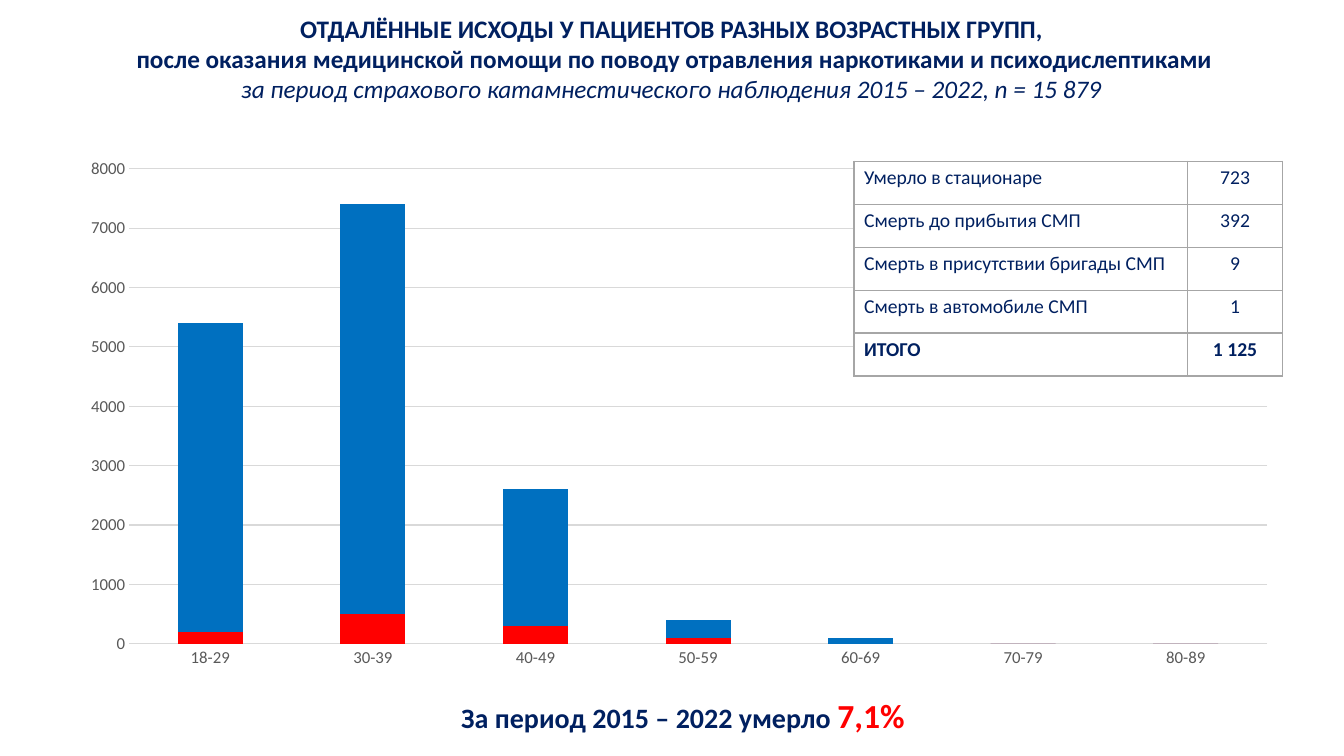
import lxml.etree
import pptx
import pptx.chart.data
import pptx.dml.color
import pptx.enum.chart
import pptx.enum.text
import pptx.oxml.ns
import pptx.util

Inches = pptx.util.Inches
Pt = pptx.util.Pt
CENTER = pptx.enum.text.PP_ALIGN.CENTER
LEFT = pptx.enum.text.PP_ALIGN.LEFT

COLORS = {
    "navy": "002060",
    "blue": "0070C0",
    "red": "FF0000",
    "label": "595959",
    "grid": "D9D9D9",
    "border": "A6A6A6",
    "paper": "FFFFFF",
}

TITLE_LINES = [
    ("ОТДАЛЁННЫЕ ИСХОДЫ У ПАЦИЕНТОВ РАЗНЫХ ВОЗРАСТНЫХ ГРУПП, ", {"bold": True}),
    ("после оказания медицинской помощи по поводу отравления наркотиками "
     "и психодислептиками", {"bold": True}),
    ("за период страхового катамнестического наблюдения 2015 – 2022, n = 15 879 ",
     {"bold": False, "italic": True}),
]
AGE_GROUPS = ["18-29", "30-39", "40-49", "50-59", "60-69", "70-79", "80-89"]
OUTCOMES = [
    ("Series 1", [200, 500, 300, 100, 0, 0, 0], "red"),
    ("Series 2", [5200, 6900, 2300, 300, 100, 0, 0], "blue"),
]
DEATHS = [
    ("Умерло в стационаре", "723"),
    ("Смерть до прибытия СМП", "392"),
    ("Смерть в присутствии бригады СМП", "9"),
    ("Смерть в автомобиле СМП", "1"),
    ("ИТОГО", "1 125"),
]


def rgb(name):
    return pptx.dml.color.RGBColor.from_string(COLORS[name])


def apply_values(target, values):
    for name, value in values.items():
        setattr(target, name, value)


def style_font(font, size, color, **values):
    apply_values(font, {"name": "Calibri", "size": Pt(size), **values})
    font.color.rgb = rgb(color)


def add_span(para, text, size, color, **values):
    span = para.add_run()
    span.text = text
    style_font(span.font, size, color, **values)


def place_title(slide, box):
    title = slide.shapes.title
    apply_values(title, dict(zip(("left", "top", "width", "height"), box)))
    frame = title.text_frame
    apply_values(frame, {
        "word_wrap": True,
        "auto_size": pptx.enum.text.MSO_AUTO_SIZE.NONE,
        "vertical_anchor": pptx.enum.text.MSO_ANCHOR.TOP,
    })
    for index, (text, values) in enumerate(TITLE_LINES):
        para = frame.add_paragraph() if index else frame.paragraphs[0]
        para.alignment = CENTER
        add_span(para, text, 18, "navy", **values)


def style_axis(axis):
    axis.major_tick_mark = pptx.enum.chart.XL_TICK_MARK.NONE
    axis.minor_tick_mark = pptx.enum.chart.XL_TICK_MARK.NONE
    style_font(axis.tick_labels.font, 12, "label")


def style_line(line):
    line.color.rgb = rgb("grid")
    line.width = Pt(0.75)


def add_age_chart(slide, box):
    data = pptx.chart.data.CategoryChartData()
    data.categories = AGE_GROUPS
    for name, counts, color in OUTCOMES:
        data.add_series(name, counts)
    chart = slide.shapes.add_chart(
        pptx.enum.chart.XL_CHART_TYPE.COLUMN_STACKED, *box, data).chart
    apply_values(chart, {"has_legend": False, "has_title": False})
    apply_values(chart.font, {"name": "Calibri", "size": Pt(10)})
    plot = chart.plots[0]
    apply_values(plot, {"gap_width": 150, "overlap": 100, "vary_by_categories": False})
    for series, (name, counts, color) in zip(plot.series, OUTCOMES):
        series.format.fill.solid()
        series.format.fill.fore_color.rgb = rgb(color)
    style_axis(chart.category_axis)
    style_line(chart.category_axis.format.line)
    scale = chart.value_axis
    style_axis(scale)
    apply_values(scale, {"minimum_scale": 0, "maximum_scale": 8000, "major_unit": 1000})
    scale.format.line.fill.background()
    style_line(scale.major_gridlines.format.line)


def add_borders(cell):
    properties = cell._tc.get_or_add_tcPr()
    qn = pptx.oxml.ns.qn
    for index, side in enumerate(("lnL", "lnR", "lnT", "lnB")):
        line = lxml.etree.Element(qn("a:" + side), w=str(Pt(1)))
        fill = lxml.etree.SubElement(line, qn("a:solidFill"))
        lxml.etree.SubElement(fill, qn("a:srgbClr"), val=COLORS["border"])
        properties.insert(index, line)


def add_deaths_table(slide, box):
    table = slide.shapes.add_table(len(DEATHS), 2, *box).table
    apply_values(table, {"first_row": False, "horz_banding": False})
    count_width = Inches(0.94)
    table.columns[0].width = box[2] - count_width
    table.columns[1].width = count_width
    for row, texts in enumerate(DEATHS):
        for column, text in enumerate(texts):
            cell = table.cell(row, column)
            cell.fill.solid()
            cell.fill.fore_color.rgb = rgb("paper")
            add_borders(cell)
            para = cell.text_frame.paragraphs[0]
            para.alignment = CENTER if column else LEFT
            add_span(para, text, 14, "navy", bold=row == len(DEATHS) - 1)


def add_summary(slide, box):
    frame = slide.shapes.add_textbox(*box).text_frame
    apply_values(frame, {"word_wrap": True, "margin_right": Inches(0.24)})
    para = frame.paragraphs[0]
    para.alignment = CENTER
    add_span(para, "За период 2015 – 2022 умерло ", 20, "navy", bold=True)
    add_span(para, "7,1%", 24, "red", bold=True)


def inches_box(*lengths):
    return tuple(Inches(length) for length in lengths)


def main():
    deck = pptx.Presentation()
    apply_values(deck, {"slide_width": Inches(13.33), "slide_height": Inches(7.5)})
    slide = deck.slides.add_slide(deck.slide_layouts[5])
    place_title(slide, inches_box(0.66, 0.08, 12.06, 1.01))
    add_age_chart(slide, inches_box(0.66, 1.47, 12.15, 5.26))
    add_deaths_table(slide, inches_box(8.47, 1.6, 4.25, 2.13))
    add_summary(slide, inches_box(0.98, 6.84, 11.73, 0.5))
    deck.save("out.pptx")


if __name__ == "__main__":
    main()
